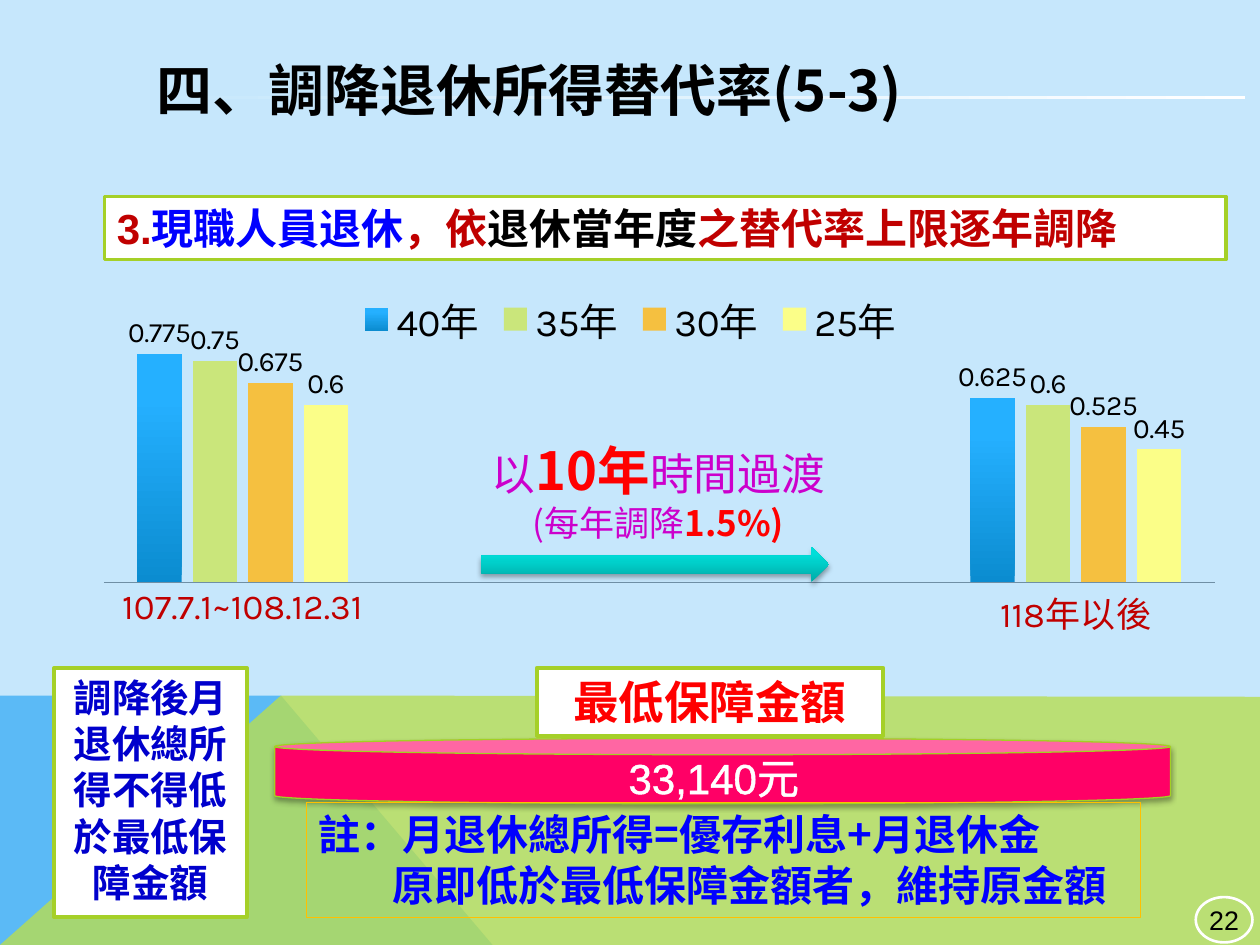
"""Build the slide on lowering the pension income replacement rate."""
from lxml import etree
from pptx import Presentation
from pptx.chart.data import CategoryChartData
from pptx.dml.color import RGBColor
from pptx.enum.chart import XL_CHART_TYPE, XL_LABEL_POSITION, XL_LEGEND_POSITION, XL_TICK_MARK
from pptx.enum.shapes import MSO_SHAPE
from pptx.enum.text import MSO_ANCHOR, MSO_AUTO_SIZE, PP_ALIGN
from pptx.oxml import parse_xml
from pptx.oxml.ns import nsdecls, qn
from pptx.util import Inches, Pt

CENTER, LEFT = PP_ALIGN.CENTER, PP_ALIGN.LEFT
RECT, CAN, ARROW, OVAL = MSO_SHAPE.RECTANGLE, MSO_SHAPE.CAN, MSO_SHAPE.RIGHT_ARROW, MSO_SHAPE.OVAL
CJK, ARIAL, KARLA = "Noto Sans CJK SC", "Arial", "Karla"
RED, BLUE, DARK_RED, PURPLE = "FF0000", "0000FF", "C00000", "CC00CC"
WHITE, BLACK, GREEN, SKY = "FFFFFF", "000000", "A5D028", "C6E7FC"

HILLS = [
    ("5BBAF6", 100, [(0, 7.5), (0, 5.52), (2.23, 5.52), (3.91, 7.5)]),
    ("B8DD52", 80, [(0, 7.5), (2.23, 5.52), (10, 5.53), (10, 7.5)]),
]
PERIODS = ["107.7.1~108.12.31", "", "", "118年以後"]
RATES = [
    ("40年", 0.775, 0.625, "31B6FD"),
    ("35年", 0.75, 0.6, "CAE67B"),
    ("30年", 0.675, 0.525, "F5C040"),
    ("25年", 0.6, 0.45, "FBFE88"),
]
BAR_STOPS = [(0, "0B8CD0"), (80, "25B0FF"), (100, "25B1FF")]
ARROW_STOPS = [(0, "00ABA7"), (80, "00DED9"), (100, "00DFDA")]

TITLE = [[("四、調降退休所得替代率(5-3)", 32, CJK, BLACK, True)]]
RULE = [[
    ("3.", 24, ARIAL, DARK_RED, True),
    ("現職人員退休", 24, CJK, BLUE, True),
    ("，依", 24, CJK, DARK_RED, True),
    ("退休當年度", 24, CJK, BLACK, True),
    ("之替代率上限逐年調降", 24, CJK, DARK_RED, True),
]]
TRANSITION = [
    [("以", 25, CJK, PURPLE, False), ("10年", 30, CJK, RED, True), ("時間過渡", 25, CJK, PURPLE, False)],
    [("(每年調降", 20, CJK, PURPLE, False), ("1.5%)", 20, CJK, RED, True)],
]
FLOOR = [[("調降後月退休總所得不得低於最低保障金額", 22, CJK, "0000CC", True)]]
AMOUNT = [[("33,140元", 24, ARIAL, WHITE, False)]]
AMOUNT_LABEL = [[("最低保障金額", 26, CJK, RED, True)]]
NOTE = [
    [("註：月退休總所得=優存利息+月退休金", 24, CJK, BLUE, True)],
    [("原即低於最低保障金額者，維持原金額", 24, CJK, BLUE, True)],
]
PAGE = [[("22", 15.3, ARIAL, BLACK, False)]]


def rgb(color):
    return RGBColor.from_string(color)


def set_gradient(fill, stops, angle):
    fill.gradient()
    fill.gradient_angle = (360 - angle) % 360
    gs_list = fill.gradient_stops[0]._gs.getparent()
    for gs in list(gs_list):
        gs_list.remove(gs)
    for pos, color in stops:
        gs = etree.SubElement(gs_list, qn("a:gs"), pos=str(pos * 1000))
        etree.SubElement(gs, qn("a:srgbClr"), val=color)


def add_shadow(sp):
    sp._element.spPr.append(parse_xml(
        f'<a:effectLst {nsdecls("a")}><a:outerShdw blurRad="{Pt(3.1)}" dist="{Pt(1.8)}" dir="5400000" '
        'rotWithShape="0"><a:srgbClr val="000000"><a:alpha val="35000"/></a:srgbClr>'
        '</a:outerShdw></a:effectLst>'))


def add_box(s, kind, at, fill=None, line=None, width=2, shadow=False):
    sp = s.shapes.add_shape(kind, *map(Inches, at))
    if shadow:
        add_shadow(sp)
    else:
        sp.shadow.inherit = False
    if fill:
        sp.fill.solid()
        sp.fill.fore_color.rgb = rgb(fill)
    else:
        sp.fill.background()
    if line:
        sp.line.color.rgb = rgb(line)
        sp.line.width = Pt(width)
    else:
        sp.line.fill.background()
    return sp


def add_label(s, at):
    return s.shapes.add_textbox(*map(Inches, at))


def write(sp, paragraphs, align=LEFT, grow=False, wrap=True, anchor=MSO_ANCHOR.TOP):
    tf = sp.text_frame
    tf.word_wrap = wrap
    tf.vertical_anchor = anchor
    tf.auto_size = MSO_AUTO_SIZE.SHAPE_TO_FIT_TEXT if grow else MSO_AUTO_SIZE.NONE
    for i, runs in enumerate(paragraphs):
        p = tf.add_paragraph() if i else tf.paragraphs[0]
        p.alignment = align
        for text, size, face, color, bold in runs:
            r = p.add_run()
            r.text = text
            r.font.size, r.font.name, r.font.bold = Pt(size), face, bold
            r.font.color.rgb = rgb(color)
            etree.SubElement(r.font._element, qn("a:ea"), typeface=CJK)
    return tf


def add_hill(s, color, alpha, points):
    start, *rest = [(Inches(x), Inches(y)) for x, y in points]
    builder = s.shapes.build_freeform(*start)
    builder.add_line_segments(rest, close=True)
    sp = builder.convert_to_shape()
    sp.shadow.inherit = False
    sp.fill.solid()
    sp.fill.fore_color.rgb = rgb(color)
    sp.line.fill.background()
    if alpha < 100:
        clr = sp._element.spPr.find(qn("a:solidFill"))[0]
        etree.SubElement(clr, qn("a:alpha"), val=str(alpha * 1000))


def add_rate_chart(s):
    data = CategoryChartData()
    data.categories = PERIODS
    for name, first, last, _ in RATES:
        data.add_series(name, [first, None, None, last])
    at = map(Inches, (0.36, 2.18, 9.29, 3.13))
    chart = s.shapes.add_chart(XL_CHART_TYPE.COLUMN_CLUSTERED, *at, data).chart
    chart.has_title = False
    chart.font.size, chart.font.name = Pt(18), KARLA
    chart.font.color.rgb = rgb(BLACK)
    chart.has_legend = True
    chart.legend.position = XL_LEGEND_POSITION.TOP
    chart.legend.include_in_layout = False
    chart.legend.font.size = Pt(22)
    cat, val = chart.category_axis, chart.value_axis
    cat.major_tick_mark = XL_TICK_MARK.NONE
    cat.tick_labels.font.size = Pt(20)
    cat.tick_labels.font.color.rgb = rgb(DARK_RED)
    cat.format.line.color.rgb = rgb("6F8FA5")
    val.visible = val.has_major_gridlines = False
    val.minimum_scale, val.maximum_scale = 0, 0.9
    plot = chart.plots[0]
    plot.gap_width, plot.overlap, plot.vary_by_categories = 150, -25, False
    for series, (*_, color) in zip(plot.series, RATES):
        series.format.fill.solid()
        series.format.fill.fore_color.rgb = rgb(color)
        labels = series.data_labels
        labels.show_value = True
        labels.position = XL_LABEL_POSITION.OUTSIDE_END
        labels.font.size = Pt(16)
    set_gradient(plot.series[0].format.fill, BAR_STOPS, 270)
    area = chart._chartSpace.chart.plotArea
    for old in area.findall(qn("c:layout")):
        area.remove(old)
    parts = [("layoutTarget", "inner"), ("xMode", "edge"), ("yMode", "edge"),
             ("x", 0.05), ("y", 0.107), ("w", 0.949), ("h", 0.673)]
    inner = "".join(f'<c:{tag} val="{value}"/>' for tag, value in parts)
    area.insert(0, parse_xml(
        f'<c:layout {nsdecls("c")}><c:manualLayout>{inner}</c:manualLayout></c:layout>'))


def main():
    prs = Presentation()
    prs.slide_width, prs.slide_height = Inches(10), Inches(7.5)
    s = prs.slides.add_slide(prs.slide_layouts[6])
    s.background.fill.solid()
    s.background.fill.fore_color.rgb = rgb(SKY)
    for hill in HILLS:
        add_hill(s, *hill)
    streak = add_box(s, RECT, (1.11, 0.76, 8.77, 0.03), SKY)
    set_gradient(streak.fill, [(0, SKY), (100, WHITE)], 0)
    add_rate_chart(s)

    write(add_box(s, RECT, (0.83, 1.56, 8.9, 0.5), WHITE, GREEN), RULE, grow=True)
    write(add_label(s, (3.65, 3.43, 3.15, 0.94)), TRANSITION, CENTER, grow=True)
    arrow = add_box(s, ARROW, (3.82, 4.34, 2.76, 0.28), "00DED9", shadow=True)
    set_gradient(arrow.fill, ARROW_STOPS, 270)

    page = add_box(s, OVAL, (9.49, 7.12, 0.45, 0.36), line=WHITE, width=1.5)
    tf = write(page, PAGE, CENTER, anchor=MSO_ANCHOR.MIDDLE)
    tf.margin_left = tf.margin_right = tf.margin_top = tf.margin_bottom = Inches(0.01)

    write(add_box(s, RECT, (0.43, 5.3, 1.53, 1.98), WHITE, GREEN), FLOOR, CENTER)
    add_box(s, CAN, (2.18, 5.86, 7.11, 0.52), "FF0066", "A3D023", 0.75, shadow=True)
    tf = write(add_label(s, (4.89, 5.92, 1.67, 0.5)), AMOUNT, grow=True)
    tf.paragraphs[0].runs[0].font._element.insert(0, parse_xml(
        f'<a:ln {nsdecls("a")} w="{Pt(1.45)}"><a:solidFill><a:srgbClr val="{WHITE}"/></a:solidFill></a:ln>'))
    tf = write(add_box(s, RECT, (4.26, 5.3, 2.75, 0.54), WHITE, GREEN), AMOUNT_LABEL, CENTER, grow=True)
    tf.paragraphs[0].line_spacing = Pt(31.2)
    tf = write(add_box(s, RECT, (2.43, 6.37, 6.62, 0.91), line="FFC000", width=0.75),
               NOTE, grow=True, wrap=False)
    tf.paragraphs[1].alignment = CENTER
    tf.paragraphs[1]._p.get_or_add_pPr().set("marL", str(Inches(0.59)))
    write(add_label(s, (1.14, 0.39, 8.51, 0.71)), TITLE)
    prs.save("out.pptx")


if __name__ == "__main__":
    main()
